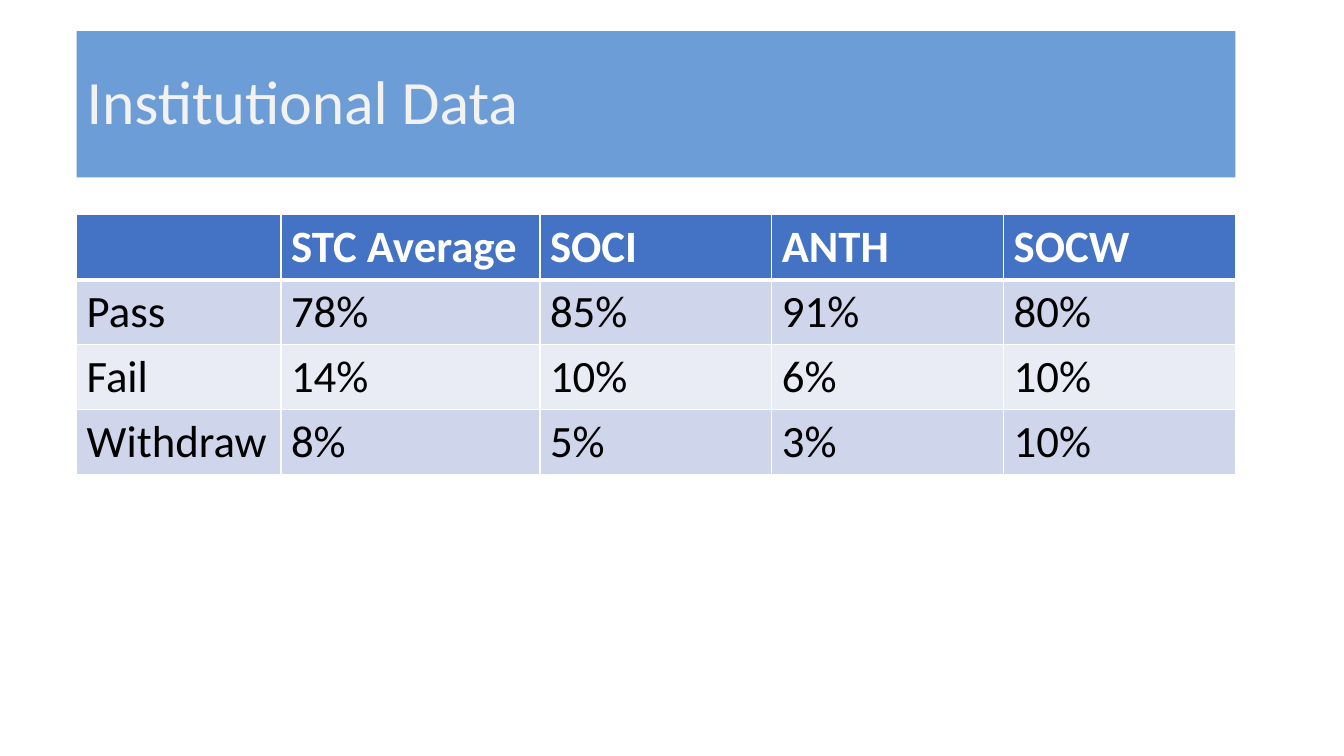
import pptx
import pptx.dml.color
import pptx.enum.text
import pptx.oxml
import pptx.oxml.ns
import pptx.util

Pt = pptx.util.Pt
FONT = "Calibri"
ROWS = [
    ["", "STC Average", "SOCI", "ANTH", "SOCW"],
    ["Pass", "78%", "85%", "91%", "80%"],
    ["Fail", "14%", "10%", "6%", "10%"],
    ["Withdraw", "8%", "5%", "3%", "10%"],
]
COLUMN_WIDTHS = [146, 185, 165.6, 165.6, 165.6]
ROW_HEIGHT = 46.1
HEADER_FILL = "4472C4"
BAND_FILLS = ["CFD5EA", "E9EBF5"]


def color(value):
    return pptx.dml.color.RGBColor.from_string(value)


def set_text(tf, text, size, fill, bold=False, spacing=1.0):
    p = tf.paragraphs[0]
    p.alignment = pptx.enum.text.PP_ALIGN.LEFT
    p.line_spacing = spacing
    if not text:
        return
    r = p.add_run()
    r.text = text
    r.font.name = FONT
    r.font.size = Pt(size)
    r.font.bold = bold
    r.font.color.rgb = color(fill)


def set_borders(cell, **widths):
    tcPr = cell._tc.get_or_add_tcPr()
    for side in "LRTB":
        tcPr.append(pptx.oxml.parse_xml(
            f'<a:ln{side} {pptx.oxml.ns.nsdecls("a")} w="{Pt(widths.get(side, 1))}">'
            f'<a:solidFill><a:srgbClr val="FFFFFF"/></a:solidFill></a:ln{side}>'))


def add_title(s, text, left, top, width, height):
    sp = s.shapes.title
    sp.left, sp.top, sp.width, sp.height = map(Pt, (left, top, width, height))
    sp.fill.solid()
    sp.fill.fore_color.rgb = color("6D9DD7")
    tf = sp.text_frame
    tf.word_wrap = True
    tf.vertical_anchor = pptx.enum.text.MSO_ANCHOR.MIDDLE
    set_text(tf, text, size=44, fill="F2F2F2", spacing=0.9)


def add_results_table(s, left, top):
    width, height = sum(COLUMN_WIDTHS), ROW_HEIGHT * len(ROWS)
    table = s.shapes.add_table(len(ROWS), len(COLUMN_WIDTHS),
                               Pt(left), Pt(top), Pt(width), Pt(height)).table
    for column, column_width in zip(table.columns, COLUMN_WIDTHS):
        column.width = Pt(column_width)
    for i, values in enumerate(ROWS):
        table.rows[i].height = Pt(ROW_HEIGHT)
        header = i == 0
        # The rule under the header is shared with the first data row
        borders = {0: {"B": 3}, 1: {"T": 3}}.get(i, {})
        for j, value in enumerate(values):
            cell = table.cell(i, j)
            set_borders(cell, **borders)
            cell.fill.solid()
            cell.fill.fore_color.rgb = color(
                HEADER_FILL if header else BAND_FILLS[(i - 1) % 2])
            set_text(cell.text_frame, value, size=32, bold=header,
                     fill="FFFFFF" if header else "000000")


def main():
    prs = pptx.Presentation()
    prs.slide_width, prs.slide_height = Pt(960), Pt(540)
    s = prs.slides.add_slide(prs.slide_layouts[5])
    # Title band
    add_title(s, "Institutional Data", 54.7, 22.3, sum(COLUMN_WIDTHS), 104.4)
    # Pass, fail and withdrawal rates
    add_results_table(s, 54.7, 153.4)
    prs.save("out.pptx")


if __name__ == "__main__":
    main()
